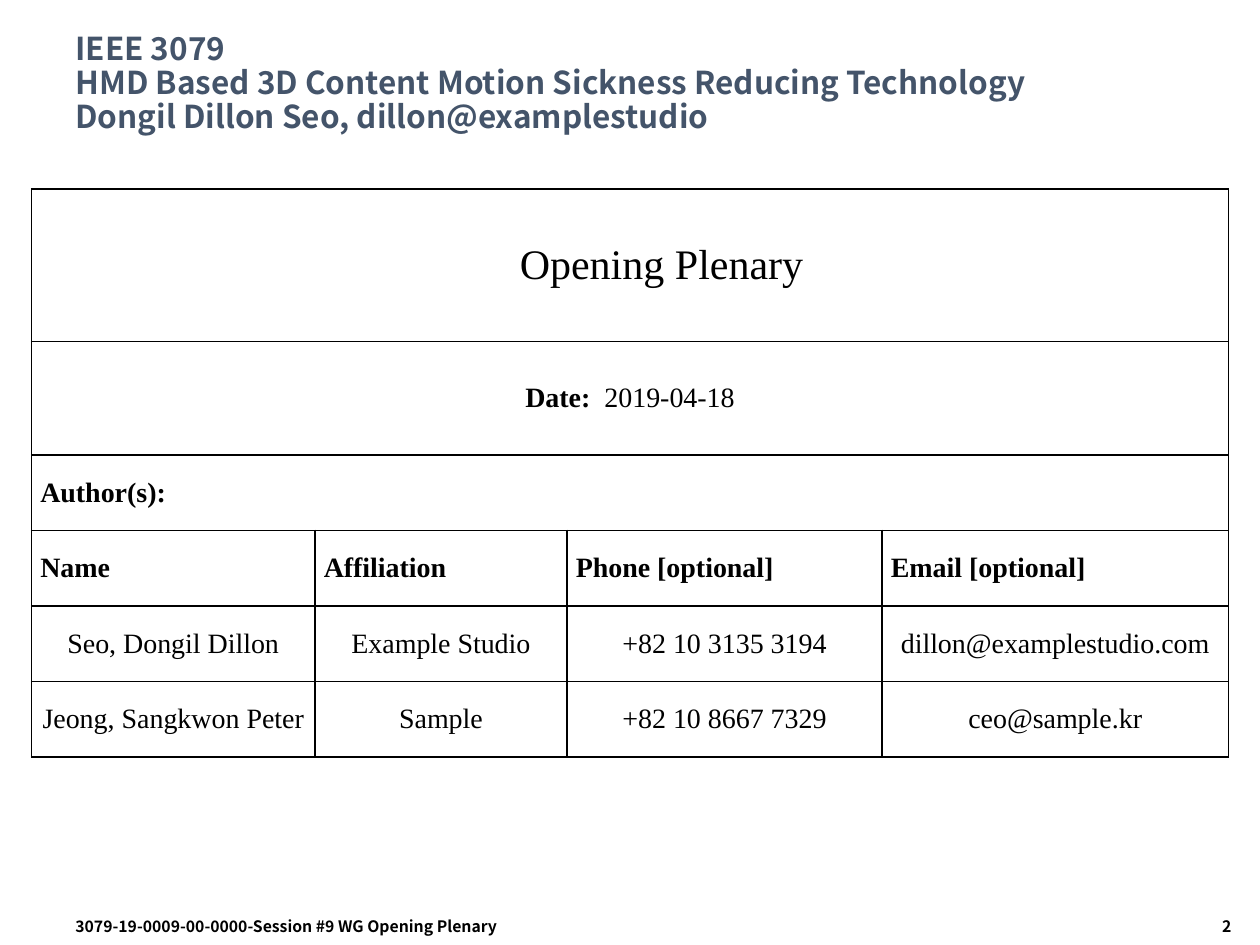
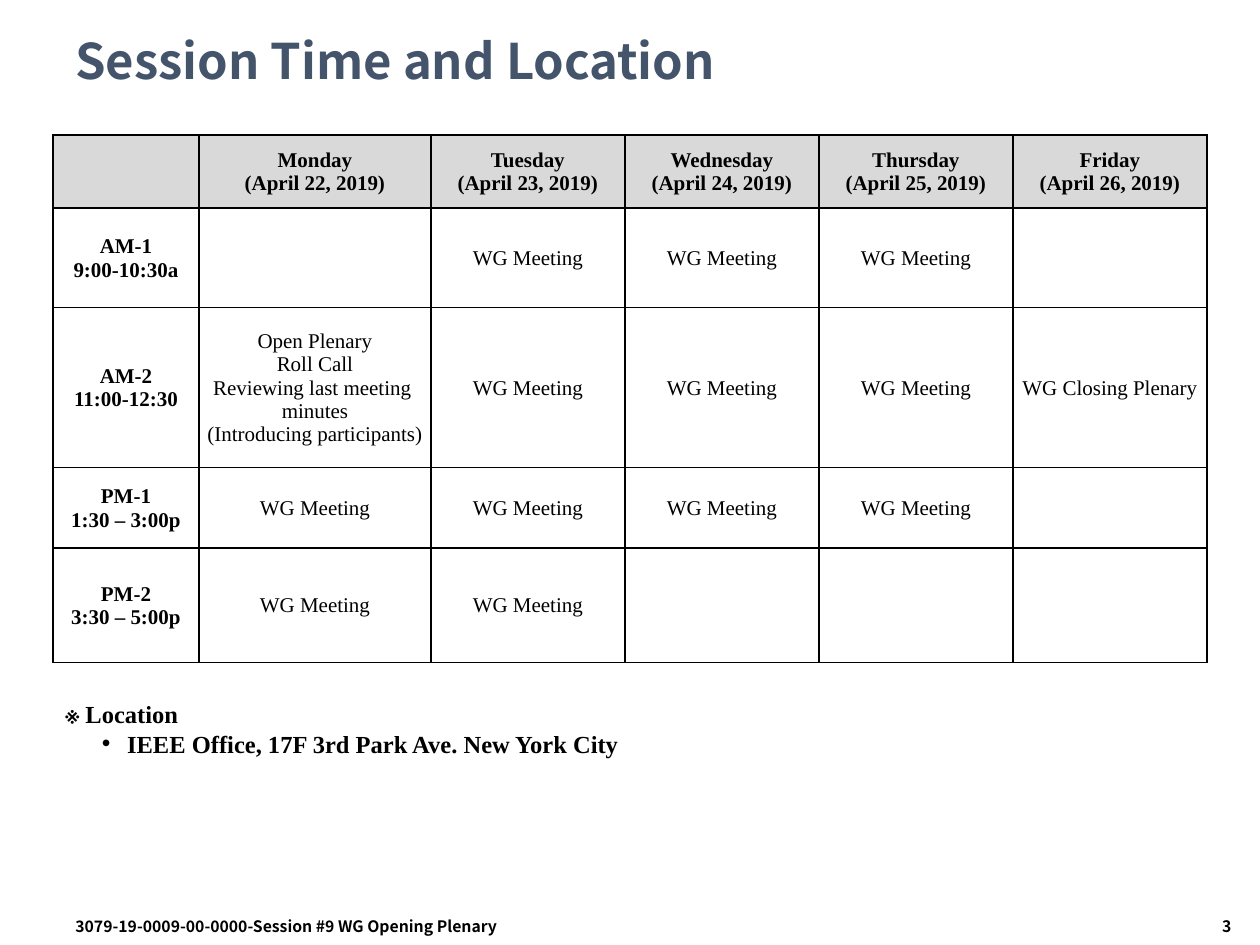
from dataclasses import dataclass

from lxml.etree import SubElement as Sub
from pptx import Presentation
from pptx.dml.color import RGBColor as Rgb
from pptx.enum.text import MSO_ANCHOR as Anchor, MSO_AUTO_SIZE as Auto, PP_ALIGN as Align
from pptx.oxml.ns import qn
from pptx.util import Inches, Pt


@dataclass(frozen=True)
class Theme:
    sans: str = "Noto Sans CJK KR"
    serif: str = "Times New Roman"
    ink: str = "000000"
    slate: str = "44546A"
    gray: str = "D9D9D9"
    small: int = 9
    body: int = 12
    note: int = 14
    label: int = 16
    lead: int = 18
    topic: int = 24
    head: int = 28


T = Theme()
FOOTER = "3079-19-0009-00-0000-Session #9 WG Opening Plenary"
MEET = "WG Meeting"


def style(para, size, bold=False, face=T.serif, color=T.ink, align=Align.LEFT):
    para.alignment = align
    font = para.font
    font.name, font.size, font.bold = face, Pt(size), bold
    font.color.rgb = Rgb.from_string(color)


def write(frame, lines, size, **look):
    """Put each line in its own styled paragraph; a \\v breaks a line."""
    for i, line in enumerate(lines):
        para = frame.paragraphs[0] if i == 0 else frame.add_paragraph()
        para.text = line
        style(para, size, **look)


def add_box(slide, place):
    frame = slide.shapes.add_textbox(*map(Inches, place)).text_frame
    frame.word_wrap = True
    return frame


def add_title(slide, text, size, height):
    frame = add_box(slide, (0.5, 0.17, 9, height))
    frame.vertical_anchor = Anchor.MIDDLE
    write(frame, [text], size, bold=True, face=T.sans, color=T.slate)
    frame.paragraphs[0].line_spacing = 0.9


def add_footer(slide, page):
    look = dict(bold=True, face=T.sans)
    write(add_box(slide, (0.5, 7.23, 4.42, 0.27)), [FOOTER], T.small, **look)
    write(add_box(slide, (8.25, 7.23, 1.62, 0.27)), [str(page)], T.small,
          align=Align.RIGHT, **look)


def rule(cell):
    """Draw a thin line on all four sides of a cell."""
    props = cell._tc.get_or_add_tcPr()
    for side in ("lnL", "lnR", "lnT", "lnB"):
        line = Sub(props, qn(f"a:{side}"), w=str(Pt(1)))
        Sub(Sub(line, qn("a:solidFill")), qn("a:srgbClr"), val=T.ink)


def add_grid(slide, place, cols, rows, pad):
    """Add a ruled, unfilled table; pad is left, top, right, bottom."""
    shape = slide.shapes.add_table(len(rows), len(cols), *map(Inches, place))
    table = shape.table
    table.first_row = table.horz_banding = False
    for col, width in zip(table.columns, cols):
        col.width = Inches(width)
    for row, height in zip(table.rows, rows):
        row.height = Inches(height)
    for cell in table.iter_cells():
        rule(cell)
        cell.fill.background()
        cell.vertical_anchor = Anchor.MIDDLE
        (cell.margin_left, cell.margin_top,
         cell.margin_right, cell.margin_bottom) = map(Inches, pad)
    return table


def add_cover(slide):
    add_title(slide, "IEEE 3079\vHMD Based 3D Content Motion Sickness Reducing Technology"
              "\vDongil Dillon Seo, dillon@examplestudio", T.lead, 1)
    table = add_grid(slide, (0.25, 1.5, 9.5, 4.5), (2.25, 2, 2.5, 2.75),
                     (1.21, 0.9) + (0.6,) * 4, (0.07, 0, 0.07, 0))
    for r in range(3):
        table.cell(r, 0).merge(table.cell(r, 3))

    topic = table.cell(0, 0).text_frame
    write(topic, ["Opening Plenary"], T.topic, align=Align.CENTER)
    topic.paragraphs[0]._p.get_or_add_pPr().set("marL", str(Inches(0.5)))
    date = table.cell(1, 0).text_frame.paragraphs[0]
    for text, bold in (("Date: ", True), (" 2019-04-18", False)):
        run = date.add_run()
        run.text, run.font.bold = text, bold
    style(date, T.label, align=Align.CENTER)
    for para in (topic.paragraphs[0], date):
        para.space_after = Pt(12)

    write(table.cell(2, 0).text_frame, ["Author(s):"], T.label, bold=True)
    people = (
        ("Name", "Affiliation", "Phone [optional]", "Email [optional]"),
        ("Seo, Dongil Dillon", "Example Studio", "+82 10 3135 3194",
         "dillon@examplestudio.com"),
        ("Jeong, Sangkwon Peter", "Sample", "+82 10 8667 7329", "ceo@sample.kr"),
    )
    for r, row in enumerate(people):
        for c, text in enumerate(row):
            write(table.cell(r + 3, c).text_frame, [text], T.label, bold=r == 0,
                  align=Align.CENTER if r else Align.LEFT)


def add_times(slide):
    days = ("Monday", "Tuesday", "Wednesday", "Thursday", "Friday")
    opening = ("Open Plenary\nRoll Call\nReviewing last meeting \vminutes\n"
               "(Introducing participants)")
    plan = (
        ["", *(f"{day}\n(April {22 + i}, 2019)" for i, day in enumerate(days))],
        ["AM-1\n9:00-10:30a", "", MEET, MEET, MEET, ""],
        ["AM-2\n11:00-12:30", opening, MEET, MEET, MEET, "WG Closing Plenary"],
        ["PM-1\n1:30 – 3:00p", MEET, MEET, MEET, MEET, ""],
        ["PM-2\n3:30 – 5:00p", MEET, MEET, "", "", ""],
    )
    table = add_grid(slide, (0.42, 1.07, 9.17, 4.2), (1.16, 1.84) + (1.54,) * 4,
                     (0.58, 0.79, 1.27, 0.64, 0.91), (0.01, 0.01, 0.01, 0))
    for r, row in enumerate(plan):
        for c, text in enumerate(row):
            cell = table.cell(r, c)
            write(cell.text_frame, text.split("\n"), T.body,
                  bold=r == 0 or c == 0, align=Align.CENTER)
            if r == 0:
                cell.fill.solid()
                cell.fill.fore_color.rgb = Rgb.from_string(T.gray)


def add_place(slide):
    frame = add_box(slide, (0.42, 5.5, 9.17, 0.57))
    frame.auto_size = Auto.SHAPE_TO_FIT_TEXT
    write(frame, ["※ Location"], T.note, bold=True)
    para = frame.add_paragraph()
    para.text = "IEEE Office, 17F 3rd Park Ave. New York City"
    props = para._p.get_or_add_pPr()
    props.set("marL", str(Inches(0.49)))
    props.set("indent", str(Inches(-0.2)))
    Sub(props, qn("a:buFont"), typeface="Arial")
    Sub(props, qn("a:buChar"), char="•")
    style(para, T.note, bold=True)


def main():
    deck = Presentation()
    deck.slide_width, deck.slide_height = Inches(10), Inches(7.5)
    blank = deck.slide_layouts[6]

    cover = deck.slides.add_slide(blank)
    add_cover(cover)
    add_footer(cover, 2)

    times = deck.slides.add_slide(blank)
    add_title(times, "Session Time and Location", T.head, 0.67)
    add_times(times)
    add_place(times)
    add_footer(times, 3)

    deck.save("out.pptx")


if __name__ == "__main__":
    main()
